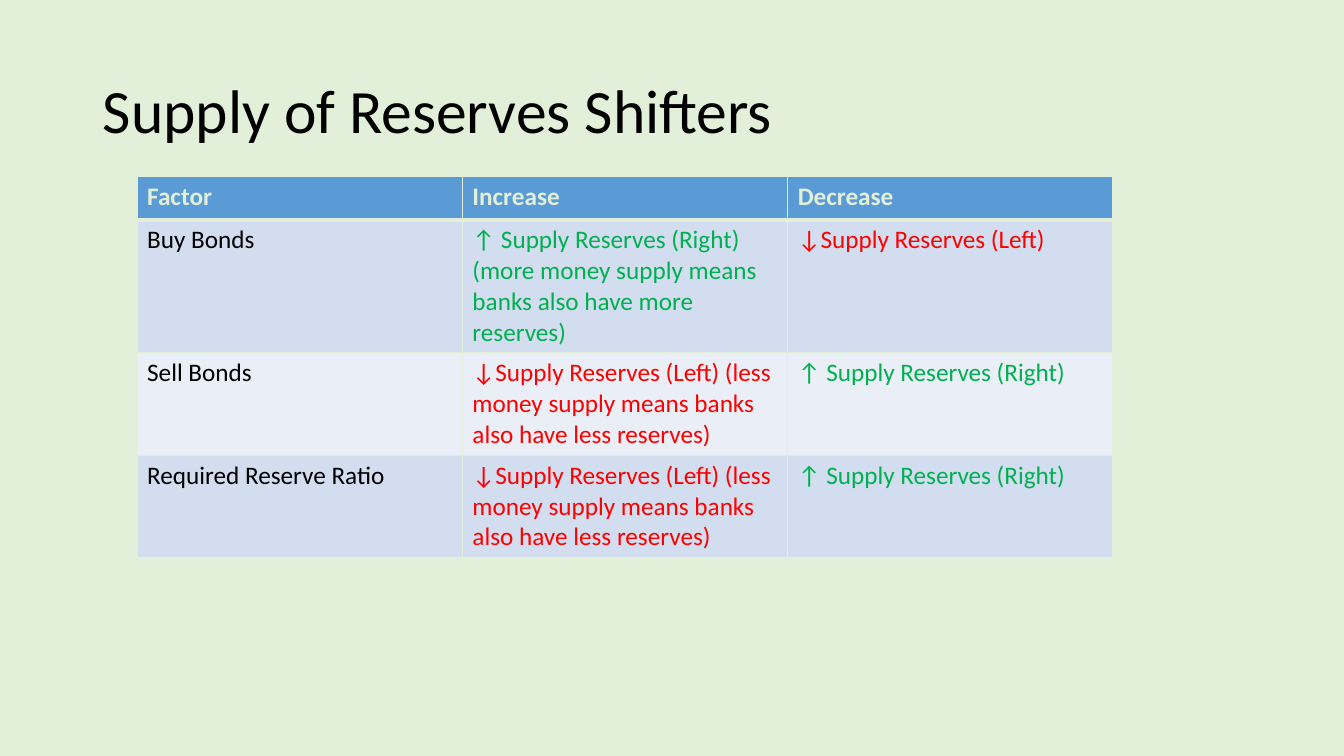
from lxml import etree
from pptx import Presentation
from pptx.dml.color import RGBColor
from pptx.enum import text
from pptx.oxml import ns
from pptx.util import Inches, Pt

C = {"bg": "E2EFD9", "header": "5B9BD5", "band": "D2DEEF", "light": "EAEFF7",
     "black": "000000", "green": "00B050", "red": "FF0000"}


def add_run(p, words, size, color, bold=False):
    r = p.add_run()
    r.text = words
    r.font.name = "Calibri"
    r.font.size = Pt(size)
    r.font.bold = bold
    r.font.color.rgb = RGBColor.from_string(C[color])


def add_borders(cell, bottom):
    tcPr = cell._tc.get_or_add_tcPr()
    widths = {"lnL": 1, "lnR": 1, "lnT": 1, "lnB": bottom}
    for i, (side, width) in enumerate(widths.items()):
        ln = etree.Element(ns.qn(f"a:{side}"), w=str(Pt(width)))
        fill = etree.SubElement(ln, ns.qn("a:solidFill"))
        etree.SubElement(fill, ns.qn("a:srgbClr"), val=C["bg"])
        tcPr.insert(i, ln)


prs = Presentation()
prs.slide_width, prs.slide_height = Inches(13.33), Inches(7.5)
s = prs.slides.add_slide(prs.slide_layouts[5])
s.background.fill.solid()
s.background.fill.fore_color.rgb = RGBColor.from_string(C["bg"])

# Title
title = s.shapes.title
title.left, title.top = Inches(0.92), Inches(0.4)
title.width, title.height = Inches(11.5), Inches(1.45)
tf = title.text_frame
tf.word_wrap = True
tf.vertical_anchor = text.MSO_ANCHOR.MIDDLE
p = tf.paragraphs[0]
p.alignment = text.PP_ALIGN.LEFT
p.line_spacing = 0.9
add_run(p, "Supply of Reserves Shifters", 44, "black")

# Table content
right = "↑ Supply Reserves (Right)"
left = "↓Supply Reserves (Left)"
less = left + " (less money supply means banks also have less reserves)"
more = right + " (more money supply means banks also have more reserves)"
rows = [
    ("Factor", "Increase", "Decrease"),
    ("Buy Bonds", more, left),
    ("Sell Bonds", less, right),
    ("Required Reserve Ratio", less, right),
]
heights = [0.43, 1.3, 1, 1]
arrow_colors = {"↑": "green", "↓": "red"}

# Table
tbl = s.shapes.add_table(len(rows), 3, Inches(1.36), Inches(1.75),
                         Inches(9.68), Inches(sum(heights))).table
for col in tbl.columns:
    col.width = Inches(9.68 / 3)
for i, row in enumerate(rows):
    tbl.rows[i].height = Inches(heights[i])
    header = i == 0
    fill = "header" if header else "band" if i % 2 else "light"
    for j, words in enumerate(row):
        cell = tbl.cell(i, j)
        cell.fill.solid()
        cell.fill.fore_color.rgb = RGBColor.from_string(C[fill])
        add_borders(cell, 3 if header else 1)
        color = "bg" if header else arrow_colors.get(words[0], "black")
        add_run(cell.text_frame.paragraphs[0], words, 18, color, header)

prs.save("out.pptx")
